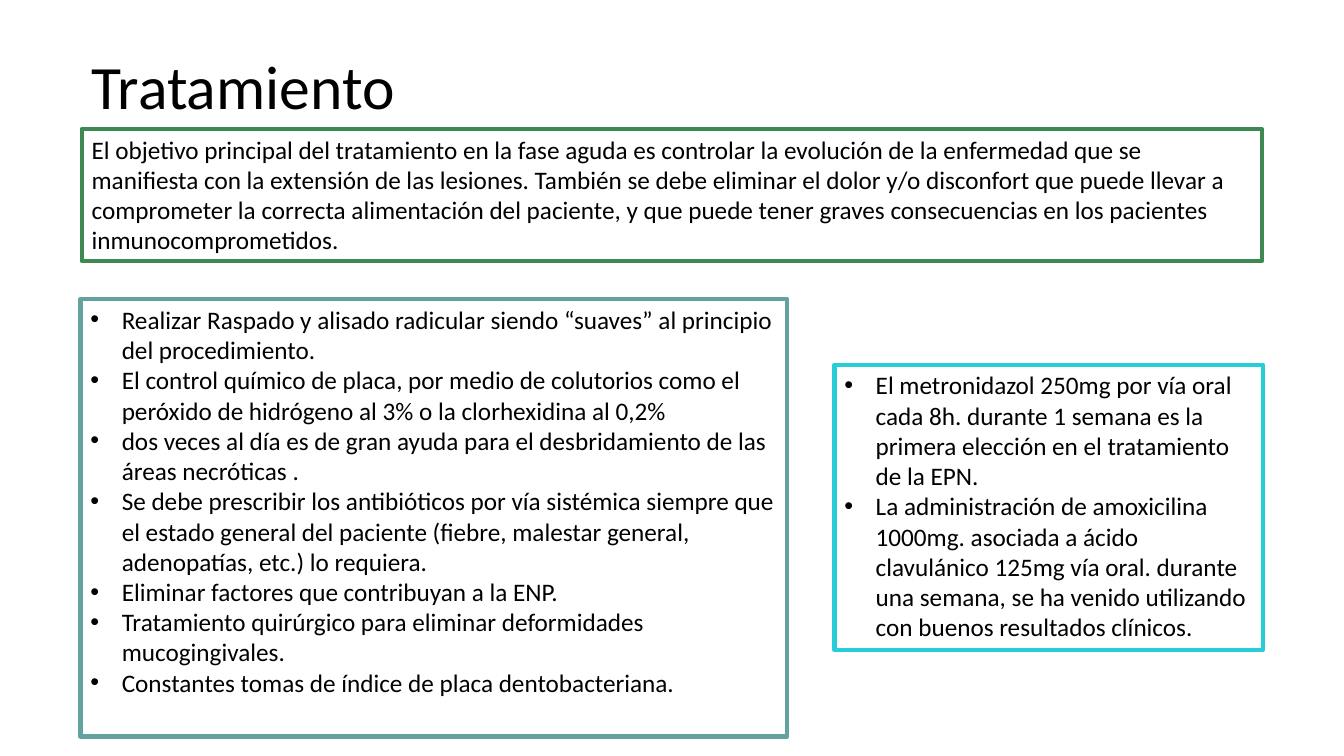
from lxml.etree import SubElement
from pptx import Presentation
from pptx.dml.color import RGBColor
from pptx.enum.shapes import MSO_SHAPE as Shape
from pptx.enum.text import MSO_ANCHOR as Anchor, PP_ALIGN as Align
from pptx.oxml.ns import qn
from pptx.util import Cm, Pt

GOAL = (
    "El objetivo principal del tratamiento en la fase aguda es controlar la evolución "
    "de la enfermedad que se manifiesta con la extensión de las lesiones. También se debe "
    "eliminar el dolor y/o disconfort que puede llevar a comprometer la correcta "
    "alimentación del paciente, y que puede tener graves consecuencias en los pacientes "
    "inmunocomprometidos."
)
PROCEDURES = [
    "Realizar Raspado y alisado radicular siendo “suaves” al principio del procedimiento.",
    "El control químico de placa, por medio de colutorios como el peróxido de hidrógeno "
    "al 3% o la clorhexidina al 0,2%",
    "dos veces al día es de gran ayuda para el desbridamiento de las áreas necróticas .",
    "Se debe prescribir los antibióticos por vía sistémica siempre que el estado general "
    "del paciente (fiebre, malestar general, adenopatías, etc.) lo requiera.",
    "Eliminar factores que contribuyan a la ENP.",
    "Tratamiento quirúrgico para eliminar deformidades mucogingivales.",
    "Constantes tomas de índice de placa dentobacteriana.",
]
MEDICATION = [
    "El metronidazol 250mg por vía oral cada 8h. durante 1 semana es la primera elección "
    "en el tratamiento de la EPN.",
    "La administración de amoxicilina 1000mg. asociada a ácido clavulánico 125mg vía oral. "
    "durante una semana, se ha venido utilizando con buenos resultados clínicos.",
]


def color(value):
    return RGBColor.from_string(value)


class TreatmentSlide:
    font_name = "Calibri"
    ink = "000000"
    paper = "FFFFFF"
    body_size = 18
    title_size = 44
    indent = Cm(0.79)

    def __init__(self, deck):
        self.slide = deck.slides.add_slide(deck.slide_layouts[6])

    def set_lines(self, frame, lines, size, bulleted=False):
        frame.word_wrap = True
        frame.vertical_anchor = Anchor.TOP
        for number, line in enumerate(lines):
            paragraph = frame.add_paragraph() if number else frame.paragraphs[0]
            paragraph.text = line
            paragraph.alignment = Align.LEFT
            paragraph.font.name = self.font_name
            paragraph.font.size = Pt(size)
            paragraph.font.color.rgb = color(self.ink)
            if bulleted:
                self.add_bullet(paragraph)

    def add_bullet(self, paragraph):
        properties = paragraph._p.get_or_add_pPr()
        properties.set("marL", str(self.indent))
        properties.set("indent", str(-self.indent))
        bullet_font = SubElement(properties, qn("a:buFont"))
        bullet_font.set("typeface", "Arial")
        SubElement(properties, qn("a:buChar")).set("char", "•")
        # The schema wants the bullet ahead of the default run properties
        properties.append(properties.find(qn("a:defRPr")))

    def title(self, text, left, top, width, height):
        heading = self.slide.shapes.add_textbox(Cm(left), Cm(top), Cm(width), Cm(height))
        self.set_lines(heading.text_frame, [text], self.title_size)

    def panel(self, lines, border, left, top, width, height, bulleted=False):
        panel = self.slide.shapes.add_shape(
            Shape.RECTANGLE, Cm(left), Cm(top), Cm(width), Cm(height))
        panel.shadow.inherit = False
        panel.fill.solid()
        panel.fill.fore_color.rgb = color(self.paper)
        panel.line.color.rgb = color(border)
        panel.line.width = Pt(3)
        self.set_lines(panel.text_frame, lines, self.body_size, bulleted)


def main():
    deck = Presentation()
    deck.slide_width, deck.slide_height = Cm(33.87), Cm(19.05)
    treatment = TreatmentSlide(deck)

    # Heading and goal
    treatment.title("Tratamiento", 2.06, 1.09, 8.86, 2.13)
    treatment.panel([GOAL], "3E8853", 2.06, 3.25, 29.74, 3.33)

    # Procedures on the left, medication on the right
    treatment.panel(PROCEDURES, "62A39F", 2.03, 7.54, 17.81, 11.02, bulleted=True)
    treatment.panel(MEDICATION, "27CED7", 21.03, 9.19, 10.8, 7.19, bulleted=True)

    deck.save("out.pptx")


if __name__ == "__main__":
    main()
